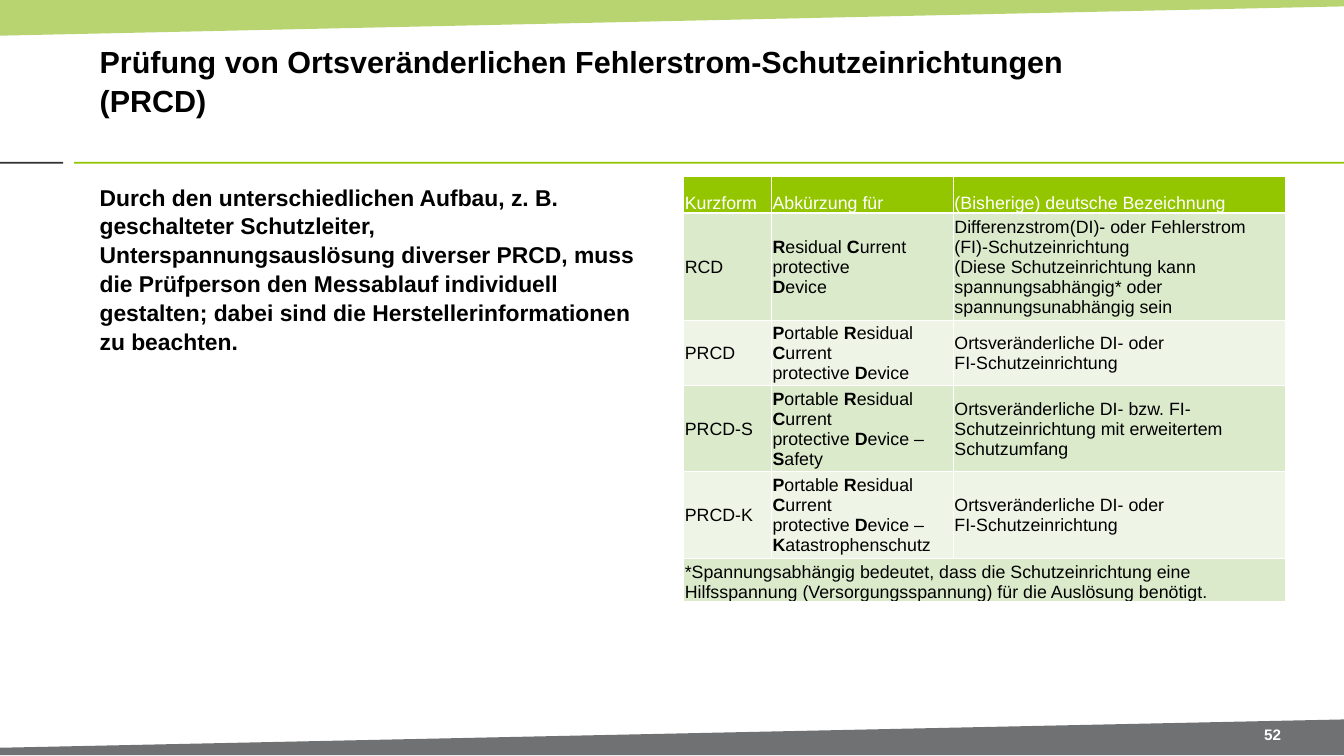
from copy import deepcopy

from lxml import etree
from pptx import Presentation
from pptx.dml.color import RGBColor
from pptx.enum.shapes import MSO_SHAPE
from pptx.enum.text import MSO_ANCHOR, PP_ALIGN
from pptx.oxml.ns import qn
from pptx.util import Inches, Pt

RECT = MSO_SHAPE.RECTANGLE
TOP, MIDDLE, BOTTOM = MSO_ANCHOR.TOP, MSO_ANCHOR.MIDDLE, MSO_ANCHOR.BOTTOM
LEFT, CENTER = PP_ALIGN.LEFT, PP_ALIGN.CENTER
WIDTH, HEIGHT = 14.7, 8.27
GREEN, BANDS = "94C600", ("DCEACC", "EEF5E7")

# Bold letters are enclosed in asterisk pairs
PORTABLE = "**P**ortable **R**esidual **C**urrent\nprotective **D**evice"
GERMAN = "Ortsveränderliche DI- oder\nFI-Schutzeinrichtung"
ROWS = [
    ("Kurzform", "Abkürzung für", "(Bisherige) deutsche Bezeichnung"),
    ("RCD", "**R**esidual **C**urrent protective\n**D**evice",
     "Differenzstrom(DI)- oder Fehlerstrom\n(FI)-Schutzeinrichtung\n"
     "(Diese Schutzeinrichtung kann spannungsabhängig* oder "
     "spannungsunabhängig sein"),
    ("PRCD", PORTABLE, GERMAN),
    ("PRCD-S", PORTABLE + " – **S**afety",
     "Ortsveränderliche DI- bzw. FI-Schutzeinrichtung mit erweitertem "
     "Schutzumfang"),
    ("PRCD-K", PORTABLE + " –\n**K**atastrophenschutz", GERMAN),
    ("*Spannungsabhängig bedeutet, dass die Schutzeinrichtung eine "
     "Hilfsspannung (Versorgungsspannung) für die Auslösung benötigt.",),
]
COLUMN_WIDTHS = (0.96, 1.99, 3.63)
ROW_HEIGHTS = (0.4, 1.1, 0.67, 0.88, 0.88, 0.44)


def rgb(color):
    return RGBColor.from_string(color)


def write(tf, text, size=14, color="000000", bold=False, align=LEFT, spacing=None):
    p = tf.paragraphs[0]
    p.alignment = align
    if spacing:
        p.line_spacing = spacing
    for i, part in enumerate(text.split("**")):
        for j, line in enumerate(part.split("\n")):
            if j:
                # The break takes the format of the run before it
                p.add_line_break()
                p._p[-1].append(deepcopy(p.runs[-1]._r.rPr))
            if line:
                r = p.add_run()
                r.text = line
                r.font.name = "Arial"
                r.font.size = Pt(size)
                r.font.bold = bold or i % 2 == 1
                r.font.color.rgb = rgb(color)


def frame(shape, anchor):
    tf = shape.text_frame
    tf.word_wrap = True
    tf.vertical_anchor = anchor
    tf.margin_left = tf.margin_right = Inches(0.11)
    tf.margin_top = tf.margin_bottom = Inches(0.06)
    return tf


def paint(shape, color):
    shape.shadow.inherit = False
    shape.fill.solid()
    shape.fill.fore_color.rgb = rgb(color)
    shape.line.fill.background()


def add_wedge(s, points, color):
    corners = [(Inches(x), Inches(y)) for x, y in points]
    builder = s.shapes.build_freeform(*corners[0], scale=1.0)
    builder.add_line_segments(corners[1:], close=True)
    wedge = builder.convert_to_shape()
    paint(wedge, color)
    return wedge


def add_bar(s, x, y, w, h, color):
    paint(s.shapes.add_shape(RECT, Inches(x), Inches(y), Inches(w), Inches(h)), color)


def add_header(s, x, y, w, h):
    # Translucent green band
    band = add_wedge(s, [(x, y), (x + w, y), (x + w, y + 0.07), (x, y + h)], "95C02A")
    fill = band.fill._xPr.find(qn("a:solidFill"))
    etree.SubElement(fill[0], qn("a:alpha"), val="67000")
    # Divider below the title
    add_bar(s, x, y + 1.77, 0.69, 0.02, "313130")
    add_bar(s, x + 0.81, y + 1.77, w - 0.81, 0.02, GREEN)


def add_footer(s, x, y, w, h):
    bottom = y + h
    add_wedge(s, [(x + w, bottom), (x, bottom), (x, bottom - 0.08), (x + w, y)],
              "707173")
    number = s.shapes.add_textbox(Inches(x + 13.49), Inches(y + 0.02),
                                  Inches(0.86), Inches(0.29))
    write(frame(number, MIDDLE), "52", size=12, color="FFFFFF", bold=True,
          align=CENTER)


def add_title(s, x, y, w, h):
    title = s.shapes.title
    title.left, title.top = Inches(x), Inches(y)
    title.width, title.height = Inches(w), Inches(h)
    write(frame(title, MIDDLE),
          "Prüfung von Ortsveränderlichen Fehlerstrom-Schutzeinrichtungen (PRCD)",
          size=24, bold=True, spacing=1.05)


def add_body(s, x, y, w, h):
    body = s.shapes.add_textbox(Inches(x), Inches(y), Inches(w), Inches(h))
    write(frame(body, TOP),
          "Durch den unterschiedlichen Aufbau, z. B. geschalteter Schutzleiter, "
          "Unterspannungsauslösung diverser PRCD, muss die Prüfperson den "
          "Messablauf individuell gestalten; dabei sind die "
          "Herstellerinformationen zu beachten.",
          size=18, bold=True, spacing=1.05)


def add_terms_table(s, x, y):
    table = s.shapes.add_table(
        len(ROWS), len(COLUMN_WIDTHS), Inches(x), Inches(y),
        Inches(sum(COLUMN_WIDTHS)), Inches(sum(ROW_HEIGHTS))).table
    for column, width in zip(table.columns, COLUMN_WIDTHS):
        column.width = Inches(width)
    for row, height in zip(table.rows, ROW_HEIGHTS):
        row.height = Inches(height)
    # The footnote spans the whole last row
    last = len(ROWS) - 1
    table.cell(last, 0).merge(table.cell(last, len(COLUMN_WIDTHS) - 1))

    for i, texts in enumerate(ROWS):
        for j, text in enumerate(texts):
            cell = table.cell(i, j)
            cell.fill.solid()
            cell.fill.fore_color.rgb = rgb(BANDS[(i - 1) % 2] if i else GREEN)
            cell.margin_left = cell.margin_right = cell.margin_top = Inches(0.01)
            cell.margin_bottom = 0
            cell.vertical_anchor = BOTTOM if i in (0, last) else MIDDLE
            write(cell.text_frame, text, color="000000" if i else "FFFFFF")


def main():
    prs = Presentation()
    prs.slide_width, prs.slide_height = Inches(WIDTH), Inches(HEIGHT)
    s = prs.slides.add_slide(prs.slide_layouts[5])
    add_header(s, 0, 0, WIDTH, 0.39)
    add_footer(s, 0, 7.87, WIDTH, 0.39)
    add_title(s, 0.98, 0.28, 11.54, 1.19)
    add_body(s, 0.98, 1.93, 6.37, 5.42)
    add_terms_table(s, 7.48, 1.93)
    prs.save("out.pptx")


if __name__ == "__main__":
    main()
